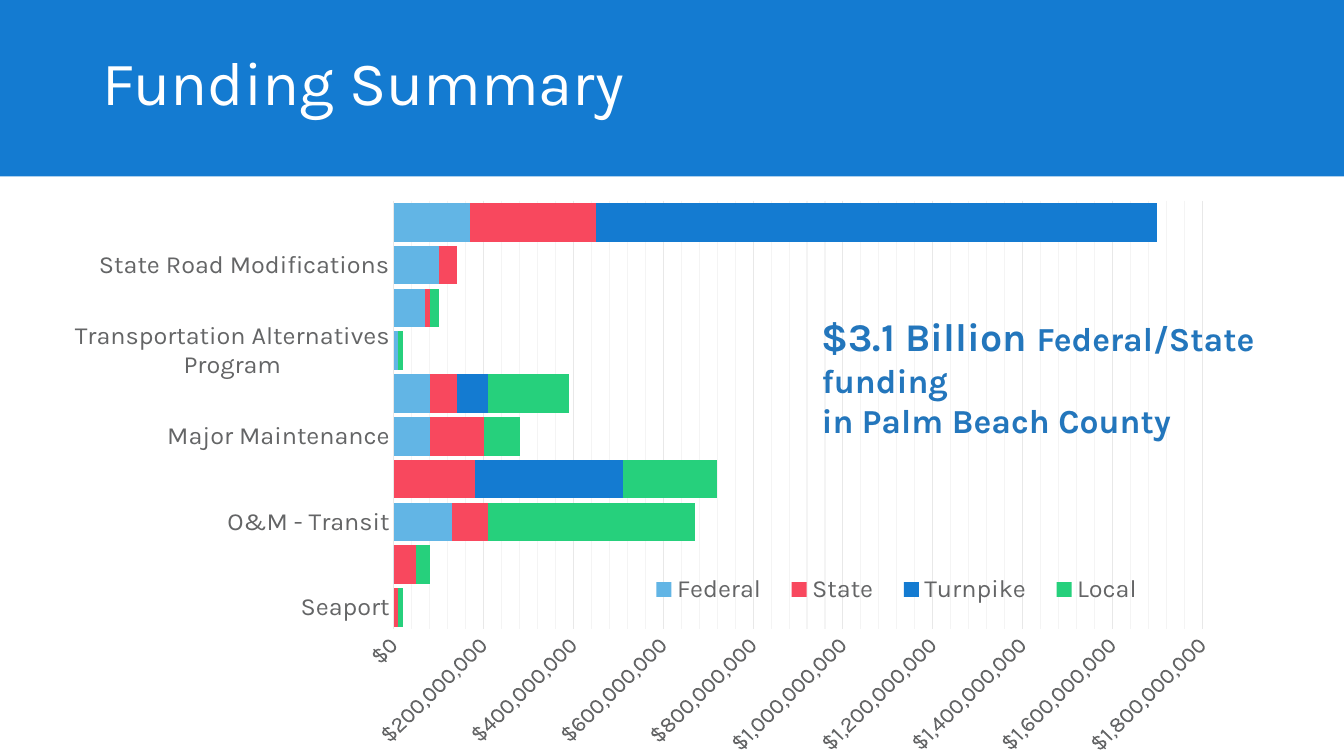
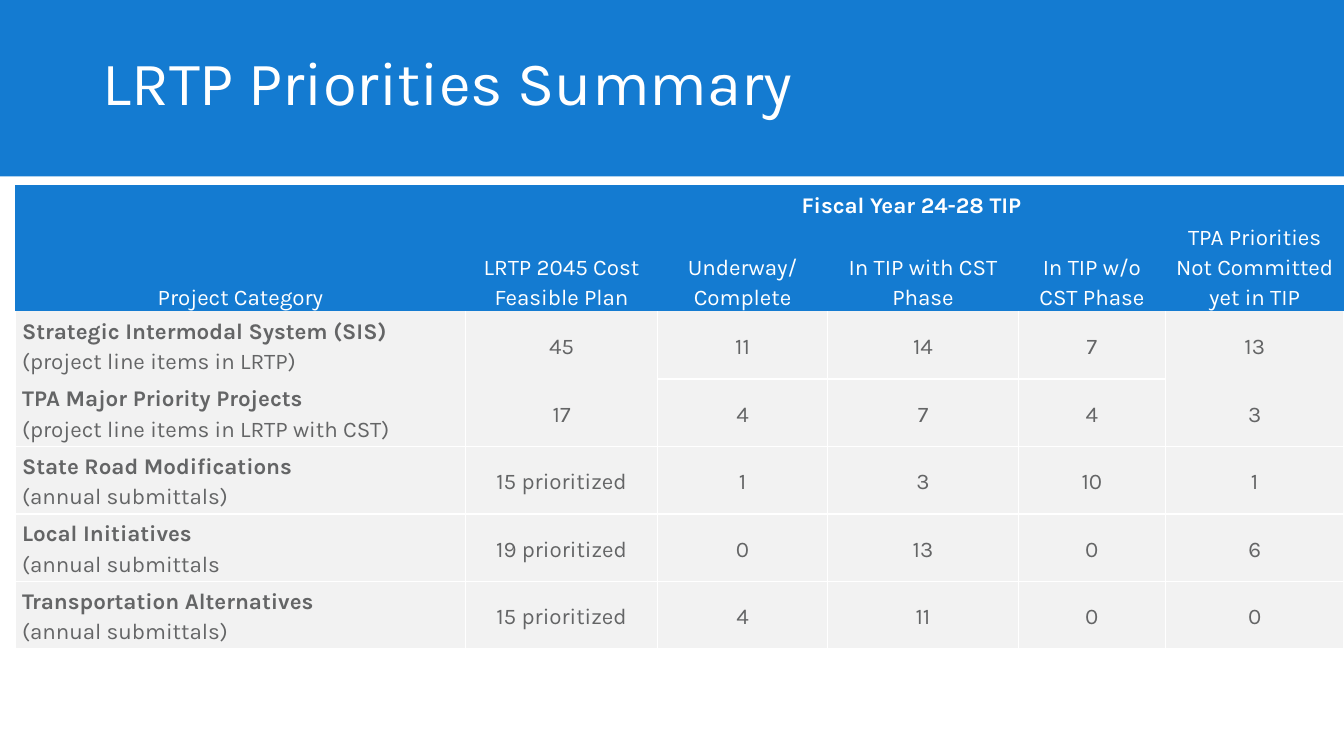
import lxml.etree
import pptx
import pptx.chart.data
import pptx.dml.color
import pptx.enum.chart
import pptx.enum.shapes
import pptx.enum.text
import pptx.oxml.ns
import pptx.util

PX = 9144
FONT = "Karla"
HUES = {
    "blue": "147BD1", "note": "2376BC", "sky": "62B5E5", "red": "F8485E",
    "green": "26D07C", "gray": "646566", "rule": "E8E8E8", "faint": "F4F4F4",
    "cell": "F2F2F2", "white": "FFFFFF",
}
ALIGN = pptx.enum.text.PP_ALIGN
ANCHOR = pptx.enum.text.MSO_ANCHOR
qn = pptx.oxml.ns.qn

MONEY = 1_000_000
KINDS = ["Seaport", "Airports", "O&M - Transit", "O&M - Roadways",
         "Major Maintenance", "Other FDOT & Local Projects",
         "Transportation Alternatives Program", "Local Initiatives Program",
         "State Road Modifications", "SIS Capacity"]
FUNDS = [
    ("Federal", "sky", [None, 0, 130, None, 80, 80, 10, 70, 100, 170]),
    ("State", "red", [10, 50, 80, 180, 120, 60, None, 10, 40, 280]),
    ("Turnpike", "blue",
     [None, None, None, 330, None, 70, None, None, None, 1250]),
    ("Local", "green", [10, 30, 460, 210, 80, 180, 10, 20, 0, 0]),
]

WIDTHS = [447, 190, 169, 189, 146, 177]
HEIGHTS = [33, 69] + [67] * 5
HEADS = [
    ["Project Category", "LRTP 2045 Cost Feasible Plan",
     "Fiscal Year 24-28 TIP", "", "",
     "TPA Priorities\nNot Committed yet in TIP"],
    ["", "", "Underway/\vComplete", "In TIP with CST Phase",
     "In TIP w/o CST Phase", ""],
]
ROWS = [
    ["Strategic Intermodal System (SIS)\v(project line items in LRTP)",
     "45", "11", "14", "7", "13"],
    ["TPA Major Priority Projects\v(project line items in LRTP with CST)",
     "17", "4", "7", "4", "3"],
    ["State Road Modifications\v(annual submittals)",
     "15 prioritized", "1", "3", "10", "1"],
    ["Local Initiatives\v(annual submittals",
     "19 prioritized", "0", "13", "0", "6"],
    ["Transportation Alternatives\v(annual submittals)",
     "15 prioritized", "4", "11", "0", "0"],
]
SPANS = [((0, 0), (1, 0)), ((0, 1), (1, 1)), ((0, 2), (0, 4)),
         ((0, 5), (1, 5))]
JOINED = (0, 1, 5)


def emu(box):
    return [n * PX for n in box]


def rgb(hue):
    return pptx.dml.color.RGBColor.from_string(HUES[hue])


def paint(part, hue):
    part.fill.solid()
    part.fill.fore_color.rgb = rgb(hue)


def style(font, size, hue, bold=False):
    font.name = FONT
    font.size = pptx.util.Pt(size)
    font.color.rgb = rgb(hue)
    font.bold = bold


def write(slide, box, text):
    frame = slide.shapes.add_textbox(*emu(box)).text_frame
    frame.word_wrap = True
    frame.text = text
    return frame


def banner(slide, box, text):
    left, top, width, height = box
    band = slide.shapes.add_shape(
        pptx.enum.shapes.MSO_SHAPE.RECTANGLE, *emu(box))
    band.shadow.inherit = False
    paint(band, "blue")
    band.line.fill.background()
    frame = write(slide, (left + 93, top + 31, width - 184, 107), text)
    frame.vertical_anchor = ANCHOR.MIDDLE
    line = frame.paragraphs[0]
    line.line_spacing = 0.9
    style(line.runs[0].font, 44, "white")


def layout(x, y, w, h, inner=False):
    outer = lxml.etree.Element(qn("c:layout"))
    fixed = lxml.etree.SubElement(outer, qn("c:manualLayout"))
    pairs = [("layoutTarget", "inner")] if inner else []
    pairs += [("xMode", "edge"), ("yMode", "edge"),
              ("x", x), ("y", y), ("w", w), ("h", h)]
    for tag, val in pairs:
        lxml.etree.SubElement(fixed, qn("c:" + tag)).set("val", str(val))
    return outer


def clear(node):
    for old in node.findall(qn("c:layout")):
        node.remove(old)


def ink(node, hue):
    solid = lxml.etree.SubElement(node, qn("a:solidFill"))
    lxml.etree.SubElement(solid, qn("a:srgbClr")).set("val", HUES[hue])


def key(chart):
    chart.has_legend = True
    legend = chart.legend
    legend.position = pptx.enum.chart.XL_LEGEND_POSITION.RIGHT
    legend.include_in_layout = True
    style(legend.font, 18, "gray")
    node = legend._element
    clear(node)
    node.find(qn("c:legendPos")).addnext(layout(0.48, 0.68, 0.41, 0.08))


def axes(chart):
    none = pptx.enum.chart.XL_TICK_MARK.NONE
    cat, val = chart.category_axis, chart.value_axis
    for axis, size in ((cat, 18), (val, 16)):
        axis.major_tick_mark = none
        axis.minor_tick_mark = none
        style(axis.tick_labels.font, size, "gray")
    cat.has_major_gridlines = False
    cat.format.line.color.rgb = rgb("rule")
    cat.format.line.width = pptx.util.Pt(0.75)
    val.format.line.fill.background()
    val.minimum_scale = 0
    val.maximum_scale = 1800 * MONEY
    val.major_unit = 200 * MONEY
    val.minor_unit = 40 * MONEY
    val.has_major_gridlines = True
    val.has_minor_gridlines = True
    rule = val.major_gridlines.format.line
    rule.color.rgb = rgb("rule")
    rule.width = pptx.util.Pt(0.75)
    minor = val._element.find(qn("c:minorGridlines"))
    shape = lxml.etree.SubElement(minor, qn("c:spPr"))
    ink(lxml.etree.SubElement(shape, qn("a:ln"), w="9525"), "faint")
    val.tick_labels.number_format = '"$"#,##0'
    val.tick_labels.number_format_is_linked = False
    body = val._element.find(qn("c:txPr")).find(qn("a:bodyPr"))
    body.set("rot", "-2700000")
    body.set("vert", "horz")


def bars(slide, box):
    data = pptx.chart.data.CategoryChartData()
    data.categories = KINDS
    for name, _, vals in FUNDS:
        data.add_series(name, [None if v is None else v * MONEY for v in vals])
    chart = slide.shapes.add_chart(
        pptx.enum.chart.XL_CHART_TYPE.BAR_STACKED, *emu(box), data).chart
    chart.has_title = False
    style(chart.font, 18, "gray")
    plot = chart.plots[0]
    plot.gap_width = 11
    plot.overlap = 100
    plot.vary_by_categories = False
    for series, (_, hue, _) in zip(plot.series, FUNDS):
        paint(series.format, hue)
        series.invert_if_negative = False
    axes(chart)
    key(chart)
    area = chart._chartSpace.find(qn("c:chart")).find(qn("c:plotArea"))
    clear(area)
    area.insert(0, layout(0.292, 0.008, 0.632, 0.784, True))


def note(slide, box):
    frame = write(slide, box, "$3.1 Billion \nin Palm Beach County")
    first, last = frame.paragraphs
    first.add_run().text = "Federal/State funding"
    for run, size in zip([*first.runs, *last.runs], (28, 24, 24)):
        style(run.font, size, "note", True)


def edge(cell, shown):
    props = cell._tc.get_or_add_tcPr()
    for spot, side in enumerate("LRTB"):
        line = lxml.etree.Element(qn("a:ln" + side), w="12700")
        if side in shown:
            ink(line, "white")
        else:
            lxml.etree.SubElement(line, qn("a:noFill"))
        props.insert(spot, line)


def fill(cell, text, head, first):
    cell.margin_left = cell.margin_right = 7 * PX
    cell.margin_top = cell.margin_bottom = 0
    cell.vertical_anchor = ANCHOR.BOTTOM if head else ANCHOR.MIDDLE
    paint(cell, "blue" if head else "cell")
    cell.text_frame.text = text
    hue = "white" if head else "gray"
    for line in cell.text_frame.paragraphs:
        line.alignment = ALIGN.LEFT if first and not head else ALIGN.CENTER
        line.line_spacing = 1.15
        style(line.font, 16, hue)
        for spot, run in enumerate(line.runs):
            bold = (text.startswith("Fiscal") if head
                    else first and spot == 0)
            style(run.font, 16, hue, bold)


def grid(slide, box):
    rows = HEADS + ROWS
    table = slide.shapes.add_table(
        len(rows), len(WIDTHS), *emu(box)).table
    table.horz_banding = False
    for col, width in zip(table.columns, WIDTHS):
        col.width = width * PX
    for row, height in zip(table.rows, HEIGHTS):
        row.height = height * PX
    for r, texts in enumerate(rows):
        head = r < len(HEADS)
        for c, text in enumerate(texts):
            cell = table.cell(r, c)
            fill(cell, text, head, c == 0)
            sides = "" if head else "LRTB"
            if r == 2:
                sides = "LR" if c in JOINED else "LRB"
            elif r == 3 and c in JOINED:
                sides = "LRB"
            edge(cell, sides)
    for start, end in SPANS:
        table.cell(*start).merge(table.cell(*end))


def main():
    deck = pptx.Presentation()
    deck.slide_width, deck.slide_height = emu((1333, 750))
    blank = deck.slide_layouts[6]
    band = (-1, 0, 1334, 175)

    funds = deck.slides.add_slide(blank)
    banner(funds, band, "Funding Summary")
    bars(funds, (20, 195, 1269, 555))
    note(funds, (805, 305, 454, 138))

    plans = deck.slides.add_slide(blank)
    banner(plans, band, "LRTP Priorities Summary")
    grid(plans, (15, 184, sum(WIDTHS), sum(HEIGHTS)))

    deck.save("out.pptx")


if __name__ == "__main__":
    main()
